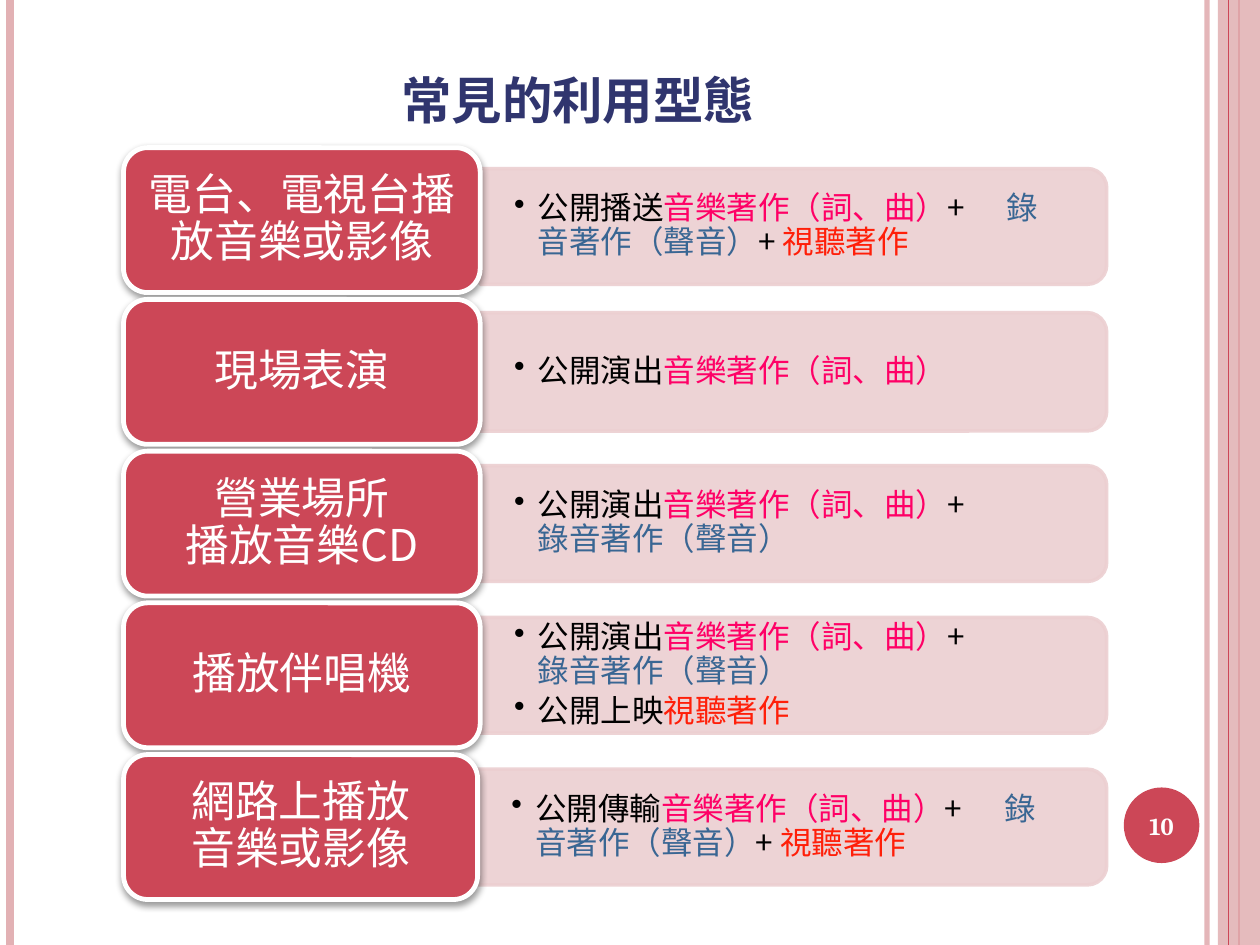
from lxml import etree
from pptx import Presentation
from pptx import util as u
from pptx.dml.color import RGBColor
from pptx.enum import shapes, text
from pptx.oxml import ns

Pt = u.Pt
BLACK = RGBColor(0x00, 0x00, 0x00)
WHITE = RGBColor(0xFF, 0xFF, 0xFF)
CRIMSON = RGBColor(0xCC, 0x47, 0x57)
ROSE = RGBColor(0xE2, 0xB1, 0xB4)
BLUSH = RGBColor(0xEC, 0xCF, 0xD1)
NAVY = RGBColor(0x30, 0x35, 0x6E)
PINK = RGBColor(0xFF, 0x00, 0x66)
BLUE = RGBColor(0x39, 0x66, 0x93)
RED = RGBColor(0xFF, 0x1F, 0x09)
SANS = "Noto Sans CJK SC"

MUSIC = ("音樂著作（詞、曲）", PINK)
RECORDING = ("錄音著作（聲音）", BLUE)
VIDEO = ("視聽著作", RED)
PLUS = ("+", BLACK)
GAP = (" ", BLACK, 20)
SPACE = (" ", BLACK)
BREAK = ("\n", BLACK)


def uses(verb, *works):
    """Return the runs of one bullet that starts with a black verb."""
    return [(verb, BLACK), *works]


BROADCAST_WORKS = (MUSIC, PLUS, GAP, RECORDING, PLUS, SPACE, VIDEO)
PLAYBACK_WORKS = (MUSIC, PLUS, BREAK, RECORDING)
ROWS = [
    (["電台、電視台播放音樂或影像"], [uses("公開播送", *BROADCAST_WORKS)], {"panel_shift": 3.6}),
    (["現場表演"], [uses("公開演出", MUSIC)], {"panel_height": 67.7}),
    (["營業場所", "播放音樂CD"], [uses("公開演出", *PLAYBACK_WORKS)], {}),
    (["播放伴唱機"], [uses("公開演出", *PLAYBACK_WORKS), uses("公開上映", VIDEO)], {}),
    (["網路上播放", "音樂或影像"], [uses("公開傳輸", *BROADCAST_WORKS)], {"label_width": 202.3}),
]


def add_effects(shape, shadow=False):
    """Give a shape or connector an effect list, empty or with a soft shadow."""
    effects = etree.SubElement(shape._element.spPr, ns.qn("a:effectLst"))
    if shadow:
        outer = etree.SubElement(effects, ns.qn("a:outerShdw"), blurRad=str(Pt(4)),
                                 dist=str(Pt(2)), dir="5400000", rotWithShape="0")
        color = etree.SubElement(outer, ns.qn("a:srgbClr"), val="000000")
        etree.SubElement(color, ns.qn("a:alpha"), val="40000")


def set_opacity(fill_owner, percent):
    """Set the opacity of a solid fill or line colour."""
    for color in fill_owner.iter(ns.qn("a:srgbClr")):
        etree.SubElement(color, ns.qn("a:alpha"), val=str(percent * 1000))


def add_box(slide, kind, left, top, width, height, fill, line=None, line_width=0, shadow=False):
    """Add a filled preset shape."""
    shape = slide.shapes.add_shape(kind, Pt(left), Pt(top), Pt(width), Pt(height))
    shape.fill.solid()
    shape.fill.fore_color.rgb = fill
    if line is None:
        shape.line.fill.background()
    else:
        shape.line.color.rgb = line
        shape.line.width = Pt(line_width)
    add_effects(shape, shadow)
    return shape


def add_line(slide, x, height, color, width):
    """Add a vertical line from the top of the slide."""
    line = slide.shapes.add_connector(shapes.MSO_CONNECTOR.STRAIGHT, Pt(x), 0, Pt(x), Pt(height))
    line.line.color.rgb = color
    line.line.width = Pt(width)
    add_effects(line)
    return line


def set_frame(frame, horizontal, vertical, anchor=text.MSO_ANCHOR.MIDDLE):
    """Set wrapping, insets and anchor of a text frame."""
    frame.word_wrap = True
    frame.margin_left = frame.margin_right = Pt(horizontal)
    frame.margin_top = frame.margin_bottom = Pt(vertical)
    frame.vertical_anchor = anchor


def add_run(paragraph, words, size, color, font=SANS, bold=False, small_caps=False, spacing=0):
    """Add formatted text to a paragraph, a newline giving a line break."""
    if words == "\n":
        paragraph.add_line_break()
        return
    run = paragraph.add_run()
    run.text = words
    run.font.size = Pt(size)
    run.font.bold = bold
    run.font.color.rgb = color
    run.font.name = font
    properties = run.font._element
    etree.SubElement(properties, ns.qn("a:ea"), typeface=font)
    if small_caps:
        properties.set("cap", "small")
    if spacing:
        properties.set("spc", str(spacing * 100))


def write_centered(frame, lines, line_spacing=1.0, **style):
    """Write each line as a centred paragraph."""
    for index, words in enumerate(lines):
        paragraph = frame.add_paragraph() if index else frame.paragraphs[0]
        paragraph.alignment = text.PP_ALIGN.CENTER
        paragraph.line_spacing = line_spacing
        add_run(paragraph, words, **style)


def write_bullets(frame, bullets):
    """Write bullets made of coloured runs."""
    for index, runs in enumerate(bullets):
        paragraph = frame.add_paragraph() if index else frame.paragraphs[0]
        paragraph.line_spacing = 0.9
        paragraph.space_after = Pt(3)
        properties = paragraph._p.get_or_add_pPr()
        properties.set("marL", str(Pt(13.5)))
        properties.set("indent", str(Pt(-13.5)))
        etree.SubElement(properties, ns.qn("a:buChar"), char="•")
        for words, color, *spacing in runs:
            add_run(paragraph, words, 18, color, spacing=spacing[0] if spacing else 0)


def add_frame_decoration(slide, width, height):
    """Draw the side stripes of the slide."""
    set_opacity(add_line(slide, width - 30.2, height, ROSE, 3)._element.spPr, 93)
    add_line(slide, 5.8, height, ROSE, 4.5)
    bar = add_box(slide, shapes.MSO_SHAPE.RECTANGLE, width - 24, 0, 24, height, ROSE)
    set_opacity(bar._element.spPr, 87)
    center_line = add_line(slide, width - 12, height, CRIMSON, 1.5)
    center_line.begin_connect(bar, 0)
    center_line.end_connect(bar, 2)
    bar._element.addprevious(center_line._element)
    add_line(slide, width - 18, height, CRIMSON, 0.75)


def add_page_number(slide, left, top, size, number):
    """Draw the round page number badge."""
    badge = add_box(slide, shapes.MSO_SHAPE.OVAL, left, top, size, size, CRIMSON)
    set_frame(badge.text_frame, 0, 0)
    write_centered(badge.text_frame, [number], size=14, color=WHITE, font="Cambria", bold=True)


def add_title(slide, left, top, width, height, words):
    """Place and fill the title placeholder."""
    title = slide.shapes.title
    title.left, title.top, title.width, title.height = map(Pt, (left, top, width, height))
    set_frame(title.text_frame, 7.2, 3.6, text.MSO_ANCHOR.BOTTOM)
    write_centered(title.text_frame, [words], size=36, color=NAVY, bold=True, small_caps=True)


def add_usage_row(slide, left, top, width, height, label, bullets,
                  label_width=203.8, panel_height=66.2, panel_shift=0):
    """Draw a label with its bullet panel to the right."""
    panel_left = left + label_width
    panel_width = width - label_width
    center_x = panel_left + panel_width / 2
    center_y = top + height / 2 + panel_shift
    panel = add_box(slide, shapes.MSO_SHAPE.ROUND_2_SAME_RECTANGLE,
                    center_x - panel_height / 2, center_y - panel_width / 2,
                    panel_height, panel_width, BLUSH, BLUSH, 2)
    panel.rotation = 90
    set_opacity(panel._element.spPr, 90)
    box = slide.shapes.add_textbox(Pt(panel_left), Pt(center_y - 30), Pt(panel_width - 3.3), Pt(60))
    set_frame(box.text_frame, 19.4, 10)
    write_bullets(box.text_frame, bullets)
    pill = add_box(slide, shapes.MSO_SHAPE.ROUNDED_RECTANGLE, left, top, label_width, height,
                   CRIMSON, WHITE, 2.75, shadow=True)
    set_frame(pill.text_frame, 7.2, 3.6)
    write_centered(pill.text_frame, label, 0.9, size=25, color=WHITE)


def main():
    """Build the slide and save it."""
    presentation = Presentation()
    presentation.slide_width, presentation.slide_height = Pt(720), Pt(540)
    slide = presentation.slides.add_slide(presentation.slide_layouts[5])
    add_frame_decoration(slide, 720, 540)
    add_page_number(slide, 642.2, 450, 43.2, "10")
    for index, (label, bullets, options) in enumerate(ROWS):
        add_usage_row(slide, 70.6, 84.4 + 86.7 * index, 561.8, 82.8, label, bullets, **options)
    add_title(slide, 36, 20.9, 588.2, 58.3, "常見的利用型態")
    presentation.save("out.pptx")


if __name__ == "__main__":
    main()
